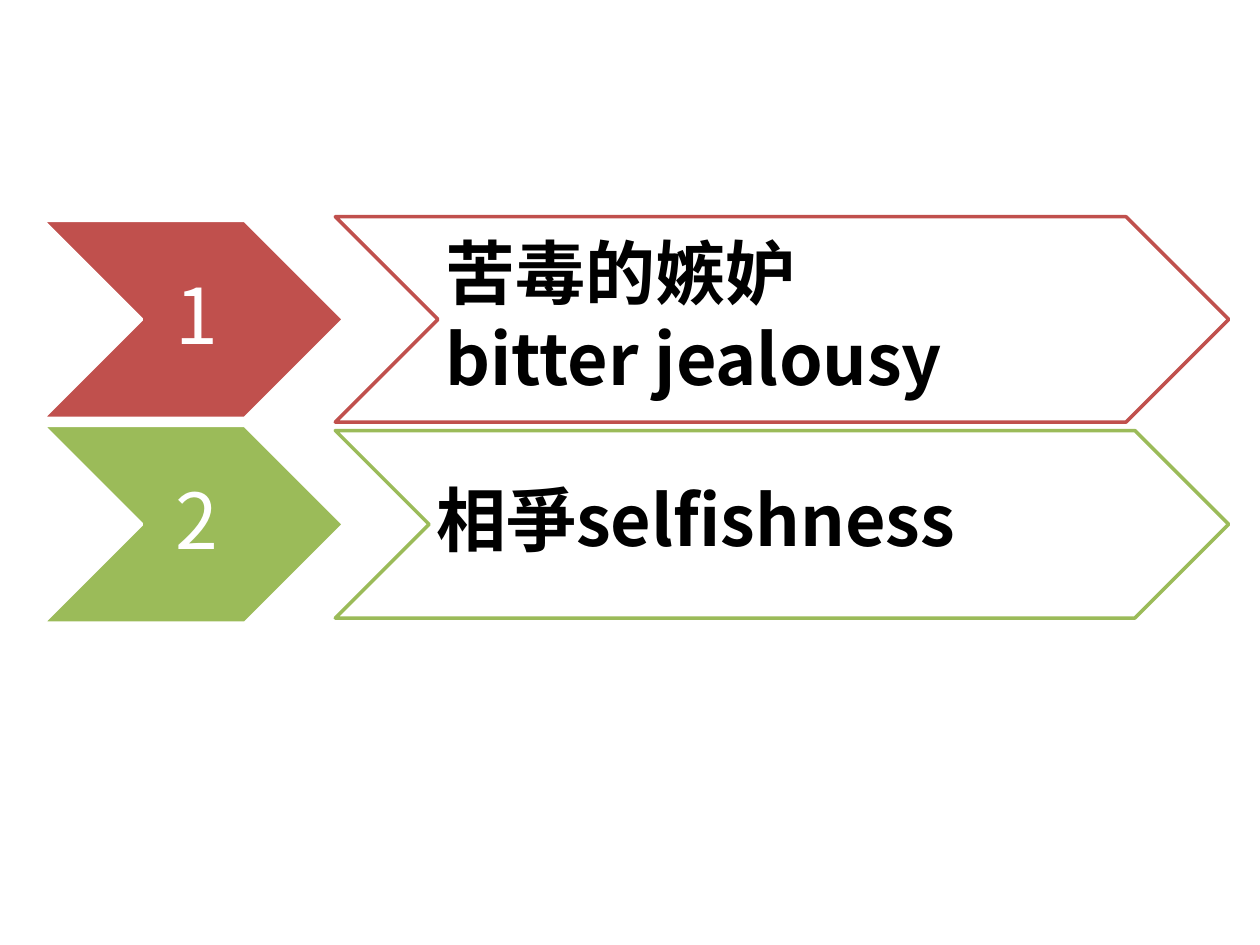
from dataclasses import dataclass

from lxml.etree import SubElement
from pptx import Presentation
from pptx.dml.color import RGBColor
from pptx.enum.shapes import MSO_SHAPE
from pptx.enum.text import MSO_ANCHOR, PP_ALIGN
from pptx.oxml.ns import qn
from pptx.slide import Slide
from pptx.util import Cm, Pt

FONT = "Noto Sans CJK SC"
COLORS = {"red": "C0504D", "green": "9BBB59", "white": "FFFFFF", "black": "000000"}

NUMBER_LEFT, NUMBER_WIDTH, NUMBER_HEIGHT = 0.86, 6.07, 3.99
TOPIC_LEFT, TOPIC_WIDTH = 6.76, 18.01
FIRST_MIDDLE, ROW_STEP = 6.44, 4.13


@dataclass
class Topic:
    lines: list[str]
    color: str
    height: float


TOPICS = [
    Topic(["苦毒的嫉妒", "bitter jealousy"], "red", 4.14),
    Topic(["相爭selfishness"], "green", 3.78),
]


def add_text(slide: Slide, lines: list[str], left: float, top: float, width: float,
             height: float, *, size: int, color: str, bold: bool = False,
             alignment: PP_ALIGN = PP_ALIGN.LEFT) -> None:
    frame = slide.shapes.add_textbox(Cm(left), Cm(top), Cm(width), Cm(height)).text_frame
    frame.word_wrap = True
    frame.vertical_anchor = MSO_ANCHOR.MIDDLE
    frame.margin_left, frame.margin_right = Cm(0.15), 0
    frame.margin_top = frame.margin_bottom = Cm(0.08)
    for index, line in enumerate(lines):
        paragraph = frame.paragraphs[0] if index == 0 else frame.add_paragraph()
        paragraph.alignment = alignment
        paragraph.line_spacing = 0.9
        paragraph.space_after = Pt(6)
        run = paragraph.add_run()
        run.text = line
        run.font.name = FONT
        run.font.size = Pt(size)
        run.font.bold = bold
        run.font.color.rgb = RGBColor.from_string(COLORS[color])
        SubElement(run.font._element, qn("a:ea")).set("typeface", FONT)


def add_chevron(slide: Slide, lines: list[str], left: float, middle: float, width: float,
                height: float, *, fill: str, line: str, **text_format) -> None:
    """Draw a chevron centred on middle, with its text between notch and point."""
    top = middle - height / 2
    shape = slide.shapes.add_shape(
        MSO_SHAPE.CHEVRON, Cm(left), Cm(top), Cm(width), Cm(height))
    shape.shadow.inherit = False
    shape.fill.solid()
    shape.fill.fore_color.rgb = RGBColor.from_string(COLORS[fill])
    shape.line.color.rgb = RGBColor.from_string(COLORS[line])
    shape.line.width = Pt(2)
    add_text(slide, lines, left + height / 2, top, width - height, height, **text_format)


def main() -> None:
    presentation = Presentation()
    presentation.slide_width, presentation.slide_height = Cm(25.4), Cm(19.05)
    slide = presentation.slides.add_slide(presentation.slide_layouts[6])
    for index, topic in enumerate(TOPICS):
        middle = FIRST_MIDDLE + index * ROW_STEP
        add_chevron(slide, [str(index + 1)], NUMBER_LEFT, middle, NUMBER_WIDTH,
                    NUMBER_HEIGHT, fill=topic.color, line="white",
                    size=44, color="white", alignment=PP_ALIGN.CENTER)
        add_chevron(slide, topic.lines, TOPIC_LEFT, middle, TOPIC_WIDTH,
                    topic.height, fill="white", line=topic.color,
                    size=40, color="black", bold=True)
    presentation.save("out.pptx")


if __name__ == "__main__":
    main()
